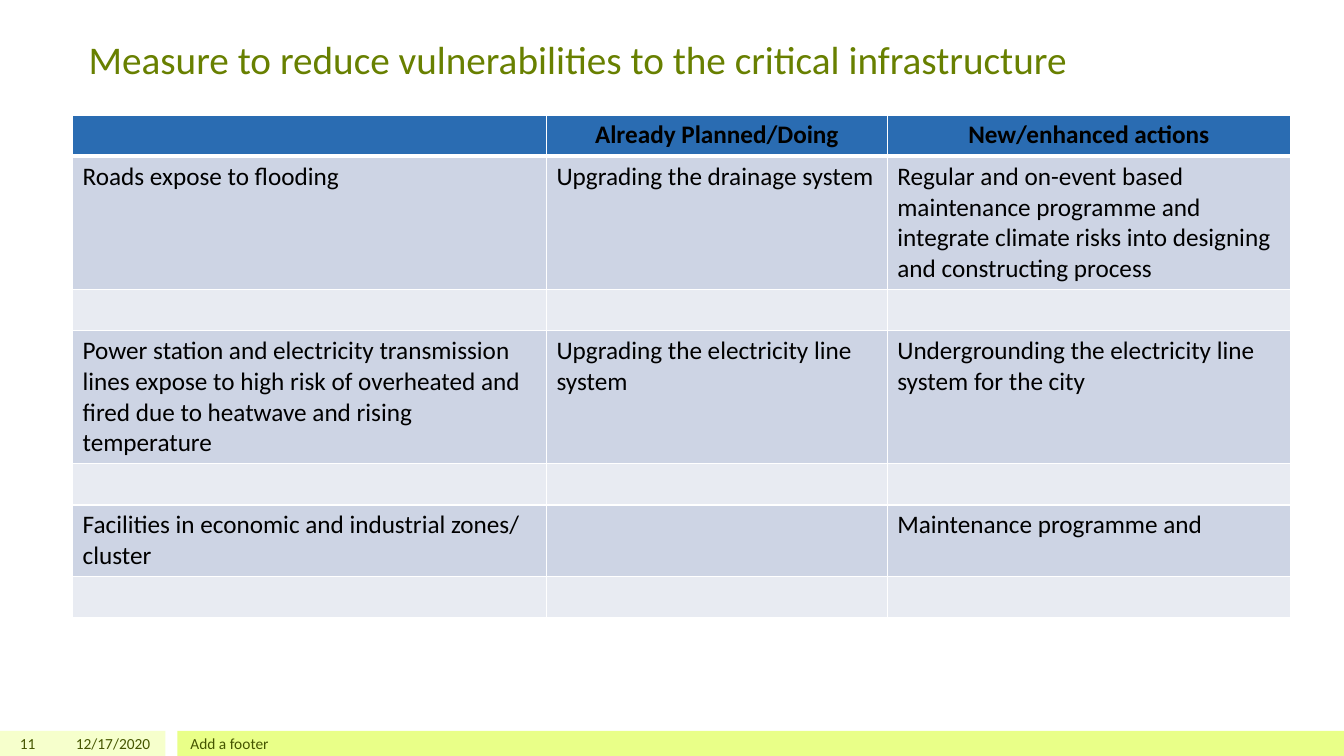
from lxml import etree
from pptx import Presentation
from pptx.dml.color import RGBColor
from pptx.enum.shapes import MSO_SHAPE
from pptx.enum.text import MSO_ANCHOR, MSO_AUTO_SIZE, PP_ALIGN
from pptx.oxml.ns import qn
from pptx.util import Inches, Pt

RECT = MSO_SHAPE.RECTANGLE
TOP, MIDDLE = MSO_ANCHOR.TOP, MSO_ANCHOR.MIDDLE
LEFT, CENTER, RIGHT = PP_ALIGN.LEFT, PP_ALIGN.CENTER, PP_ALIGN.RIGHT
NO_FIT = MSO_AUTO_SIZE.NONE

FONT = "Calibri"
COLORS = {
    "title": "688000", "footer": "455500", "text": "000000",
    "pale": "F6FFCC", "lime": "E9FF88", "head": "2A6CB2",
    "odd": "CDD4E4", "even": "E8EBF2", "rule": "FFFFFF",
}

TITLE = "Measure to reduce vulnerabilities to the critical infrastructure"
ROWS = [
    ("", "Already Planned/Doing", "New/enhanced actions"),
    ("Roads expose to flooding", "Upgrading the drainage system",
     "Regular and on-event based maintenance programme and integrate "
     "climate risks into designing and constructing process"),
    ("", "", ""),
    ("Power station and electricity transmission lines expose to high risk "
     "of overheated and fired due to heatwave and rising temperature",
     "Upgrading the electricity line system",
     "Undergrounding the electricity line system for the city"),
    ("", "", ""),
    ("Facilities in economic and industrial zones/ cluster", "",
     "Maintenance programme and"),
    ("", "", ""),
]
WIDTHS = [4.7, 3.38, 4.0]
HEIGHTS = [0.41, 1.32, 0.41, 1.32, 0.41, 0.71, 0.41]

# left, width, color
BANDS = [(0, 1.64, "pale"), (1.76, 11.57, "lime")]
# left, width, text, alignment
FOOTERS = [
    (0, 0.45, "11", RIGHT),
    (0.5, 1.09, "12/17/2020", RIGHT),
    (1.79, 10, "Add a footer", LEFT),
]
FOOT_TOP, FOOT_HIGH = 7.25, 0.25


def color(name):
    return RGBColor.from_string(COLORS[name])


def write(frame, text, size, name, align=LEFT, bold=False):
    frame.text = text
    par = frame.paragraphs[0]
    par.alignment = align
    style = {"name": FONT, "size": Pt(size), "bold": bold}
    for key, value in style.items():
        setattr(par.font, key, value)
    par.font.color.rgb = color(name)


def rule(cell, side, width):
    """Draw one border of a cell; call before the cell is filled."""
    props = cell._tc.get_or_add_tcPr()
    line = etree.SubElement(props, qn("a:ln" + side), w=str(Pt(width)))
    fill = etree.SubElement(line, qn("a:solidFill"))
    etree.SubElement(fill, qn("a:srgbClr"), val=COLORS["rule"])


def add_footer(slide):
    top, high = Inches(FOOT_TOP), Inches(FOOT_HIGH)
    for left, width, name in BANDS:
        band = slide.shapes.add_shape(
            RECT, Inches(left), top, Inches(width), high)
        band.shadow.inherit = False
        band.fill.solid()
        band.fill.fore_color.rgb = color(name)
        band.line.fill.background()
    for left, width, text, align in FOOTERS:
        box = slide.shapes.add_textbox(
            Inches(left), top, Inches(width), high)
        frame = box.text_frame
        form = {"word_wrap": True, "vertical_anchor": MIDDLE,
                "margin_top": 0, "margin_bottom": 0}
        for key, value in form.items():
            setattr(frame, key, value)
        write(frame, text, 11, "footer", align)


def add_grid(slide):
    table = slide.shapes.add_table(
        len(ROWS), len(WIDTHS), Inches(0.72), Inches(1.14),
        Inches(sum(WIDTHS)), Inches(sum(HEIGHTS))).table
    for col, width in zip(table.columns, WIDTHS):
        col.width = Inches(width)
    for r, texts in enumerate(ROWS):
        table.rows[r].height = Inches(HEIGHTS[r])
        head = r == 0
        shade = "head" if head else "odd" if r % 2 else "even"
        edges = {"L": 1, "R": 1, "T": 3 if r == 1 else 1,
                 "B": 3 if head else 1}
        for c, text in enumerate(texts):
            cell = table.cell(r, c)
            for side, width in edges.items():
                rule(cell, side, width)
            cell.fill.solid()
            cell.fill.fore_color.rgb = color(shade)
            write(cell.text_frame, text, 18, "text",
                  CENTER if head else LEFT, head)


def add_title(slide):
    title = slide.shapes.title
    place = {"left": 0.78, "top": 0.3, "width": 12.55, "height": 0.79}
    for key, value in place.items():
        setattr(title, key, Inches(value))
    frame = title.text_frame
    form = {"word_wrap": True, "vertical_anchor": TOP, "auto_size": NO_FIT}
    for key, value in form.items():
        setattr(frame, key, value)
    write(frame, TITLE, 28, "title")


def main():
    deck = Presentation()
    deck.slide_width, deck.slide_height = Inches(13.33), Inches(7.5)
    slide = deck.slides.add_slide(deck.slide_layouts[5])
    add_footer(slide)
    add_grid(slide)
    add_title(slide)
    deck.save("out.pptx")


if __name__ == "__main__":
    main()
